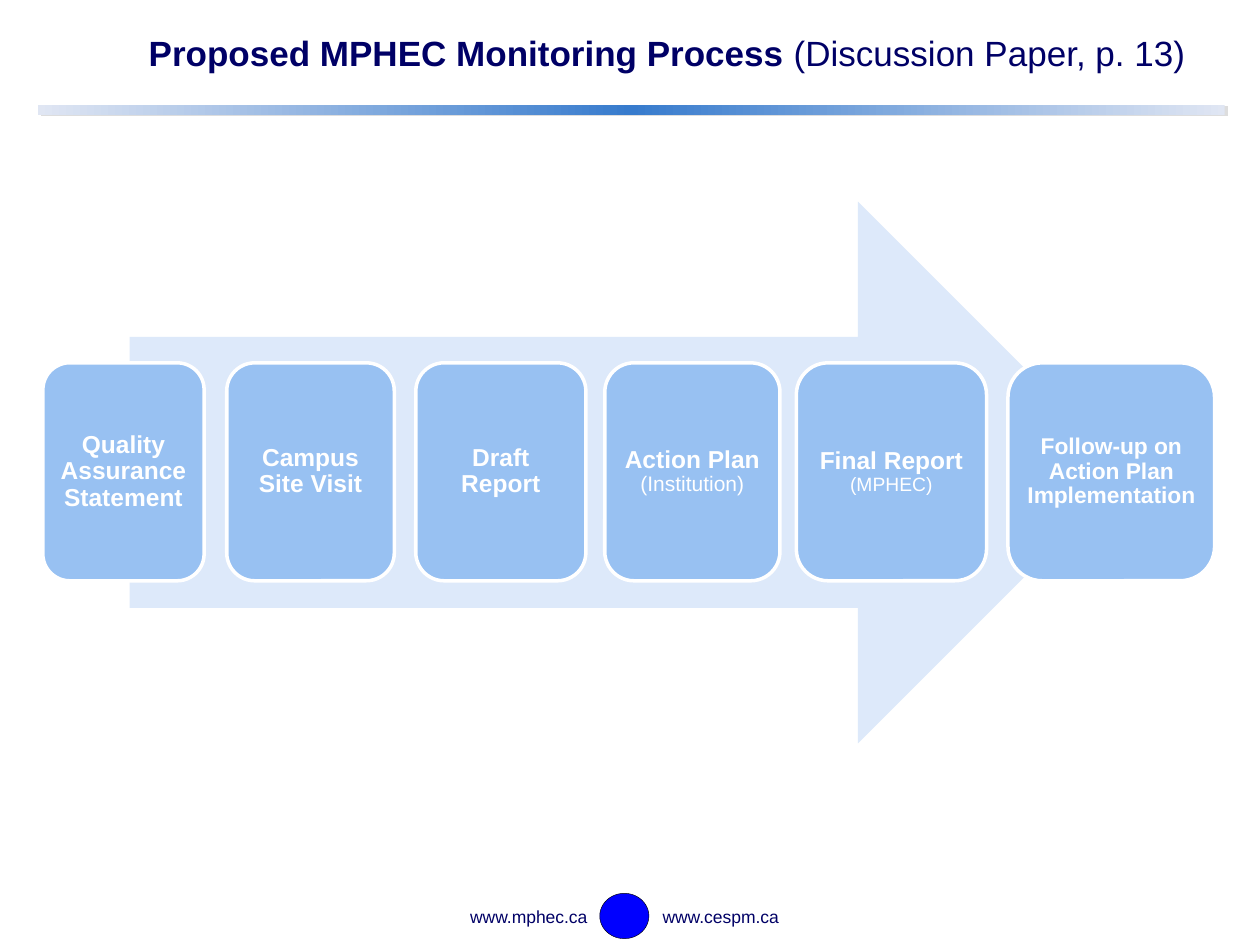
from copy import deepcopy
from dataclasses import dataclass

from pptx import Presentation
from pptx.dml.color import RGBColor
from pptx.enum.shapes import MSO_SHAPE
from pptx.enum.text import MSO_ANCHOR, PP_ALIGN
from pptx.oxml import parse_xml
from pptx.oxml.ns import nsdecls, qn
from pptx.util import Inches, Pt


@dataclass(frozen=True)
class Theme:
    font: str = "Arial"
    navy: RGBColor = RGBColor(0x00, 0x00, 0x66)
    white: RGBColor = RGBColor(0xFF, 0xFF, 0xFF)
    black: RGBColor = RGBColor(0x00, 0x00, 0x00)
    step: RGBColor = RGBColor(0x98, 0xC1, 0xF2)
    arrow: RGBColor = RGBColor(0xDD, 0xE9, 0xFA)
    emblem: RGBColor = RGBColor(0x00, 0x00, 0xFF)
    rule_edge: RGBColor = RGBColor(0xE0, 0xE6, 0xF3)
    rule_middle: RGBColor = RGBColor(0x37, 0x7B, 0xCD)
    rule_shadow: str = "DDDDDD"
    title_size: int = 20
    address_size: int = 10


THEME = Theme()

# Each step: left, width, main text, its size, side note, its size
STEPS = [
    (0.34, 1.28, "Quality Assurance Statement", 14, "", 0),
    (1.8, 1.33, "Campus Site Visit", 14, "", 0),
    (3.3, 1.35, "Draft Report", 14, "", 0),
    (4.8, 1.39, "Action Plan ", 14, "(Institution)", 12),
    (6.32, 1.51, "Final Report ", 14, "(MPHEC)", 11),
    (8, 1.64, "Follow-up on Action Plan Implementation", 13, "", 0),
]
STEP_TOP, STEP_HEIGHT = 2.88, 1.73


def set_font(font, color, size=None, bold=None):
    font.name = THEME.font
    font.color.rgb = color
    font.bold = bold
    if size:
        font.size = Pt(size)


def add_run(paragraph, text, size=None, bold=None):
    run = paragraph.add_run()
    run.text = text
    run.font.bold = bold
    if size:
        run.font.size = Pt(size)


def add_filled_shape(slide, kind, box, fill, line=None, line_width=0):
    shape = slide.shapes.add_shape(kind, *map(Inches, box))
    shape.shadow.inherit = False
    shape.fill.solid()
    shape.fill.fore_color.rgb = fill
    if line is None:
        shape.line.fill.background()
    else:
        shape.line.color.rgb = line
        shape.line.width = Pt(line_width)
    return shape


def add_title(slide):
    title = slide.shapes.title
    title.left, title.top = Inches(1.08), Inches(0.03)
    title.width, title.height = Inches(8.63), Inches(0.81)
    title.text_frame.vertical_anchor = MSO_ANCHOR.MIDDLE
    heading = title.text_frame.paragraphs[0]
    heading.alignment = PP_ALIGN.LEFT
    heading.line_spacing = 0.9
    set_font(heading.font, THEME.navy, THEME.title_size)
    add_run(heading, "Proposed MPHEC Monitoring Process ", bold=True)
    add_run(heading, "(Discussion Paper, p. 13)", bold=False)


def add_rule(slide):
    rule = add_filled_shape(slide, MSO_SHAPE.RECTANGLE, (0.3, 0.83, 9.42, 0.08),
                            THEME.rule_middle)
    rule.fill.gradient()
    rule.fill.gradient_angle = 0
    properties = rule._element.spPr

    # Third stop, so that the colour peaks in the middle
    stop_list = properties.find(".//" + qn("a:gsLst"))
    stop_list.append(deepcopy(stop_list[-1]))
    colors = (THEME.rule_edge, THEME.rule_middle, THEME.rule_edge)
    for index, (stop, color) in enumerate(zip(rule.fill.gradient_stops, colors)):
        stop.position = index / 2
        stop.color.rgb = color

    # Hard offset shadow
    properties.find(qn("a:effectLst")).append(parse_xml(
        f'<a:outerShdw {nsdecls("a")} blurRad="0" dist="{Pt(2.2)}" dir="1620000" '
        f'algn="tl" rotWithShape="0"><a:srgbClr val="{THEME.rule_shadow}"/>'
        "</a:outerShdw>"))


def add_step(slide, left, width, text, size, note, note_size):
    step = add_filled_shape(slide, MSO_SHAPE.ROUNDED_RECTANGLE,
                            (left, STEP_TOP, width, STEP_HEIGHT),
                            THEME.step, THEME.white, 2)
    frame = step.text_frame
    frame.word_wrap = True
    frame.vertical_anchor = MSO_ANCHOR.MIDDLE
    frame.margin_left = frame.margin_right = Inches(0.06)
    frame.margin_top = frame.margin_bottom = Inches(0.06)
    label = frame.paragraphs[0]
    label.alignment = PP_ALIGN.CENTER
    label.line_spacing = 0.9
    set_font(label.font, THEME.white, size, bold=True)
    add_run(label, text)
    if note:
        add_run(label, note, note_size, bold=False)


def add_address(slide, address, left, width, alignment):
    box = slide.shapes.add_textbox(Inches(left), Inches(7.14), Inches(width), Inches(0.27))
    box.text_frame.word_wrap = True
    line = box.text_frame.paragraphs[0]
    line.text = address
    line.alignment = alignment
    set_font(line.font, THEME.navy, THEME.address_size)


def main():
    presentation = Presentation()
    presentation.slide_width, presentation.slide_height = Inches(10), Inches(7.5)
    slide = presentation.slides.add_slide(presentation.slide_layouts[5])

    # Header
    add_title(slide)
    add_rule(slide)

    # Process steps over the arrow
    add_filled_shape(slide, MSO_SHAPE.RIGHT_ARROW, (1.03, 1.6, 7.93, 4.3), THEME.arrow)
    for step in STEPS:
        add_step(slide, *step)

    # Footer with a plain disc between the web addresses
    add_filled_shape(slide, MSO_SHAPE.OVAL, (4.76, 7.09, 0.39, 0.36),
                     THEME.emblem, THEME.black, 0.25)
    add_address(slide, "www.mphec.ca", 2.95, 1.81, PP_ALIGN.RIGHT)
    add_address(slide, "www.cespm.ca", 5.16, 1.25, PP_ALIGN.LEFT)

    presentation.save("out.pptx")


if __name__ == "__main__":
    main()
